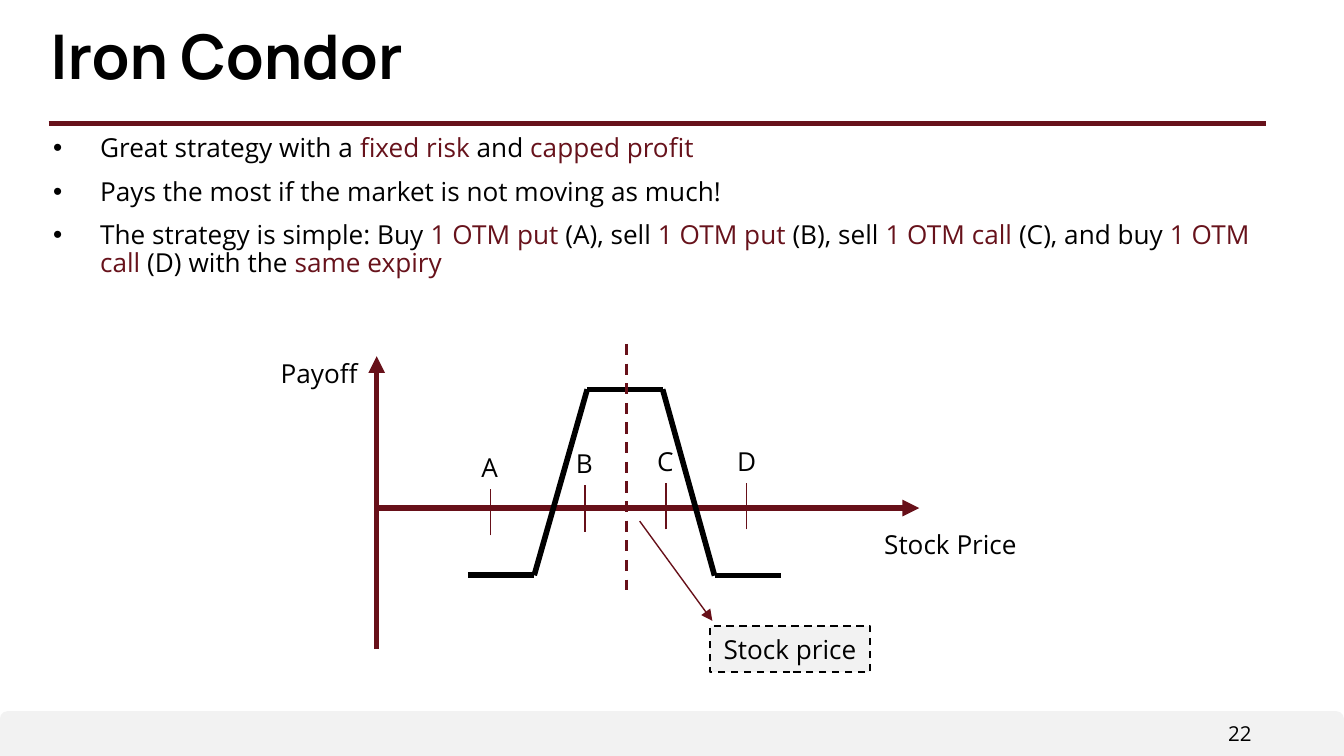
"""Builds the Iron Condor option strategy slide."""
from itertools import pairwise

from lxml import etree
from pptx import Presentation
from pptx.dml.color import RGBColor
from pptx.enum.dml import MSO_LINE
from pptx.enum.shapes import MSO_CONNECTOR, MSO_SHAPE
from pptx.enum.text import MSO_ANCHOR, PP_ALIGN
from pptx.oxml.ns import qn
from pptx.util import Pt

STRAIGHT = MSO_CONNECTOR.STRAIGHT
DASH = MSO_LINE.DASH
RECT, ROUND_TOP = MSO_SHAPE.RECTANGLE, MSO_SHAPE.ROUND_2_SAME_RECTANGLE
TOP, MIDDLE = MSO_ANCHOR.TOP, MSO_ANCHOR.MIDDLE
LEFT, CENTER, RIGHT = PP_ALIGN.LEFT, PP_ALIGN.CENTER, PP_ALIGN.RIGHT


def rgb(value):
    return RGBColor.from_string(value)


def add_text(p, text, size=14, font="Open Sans", color="000000", bold=False,
             align=LEFT, spacing=None):
    p.alignment = align
    p.line_spacing = spacing
    r = p.add_run()
    r.text = text
    r.font.size, r.font.name, r.font.bold = Pt(size), font, bold
    r.font.color.rgb = rgb(color)


class Deck:
    BLACK, GREY = "000000", "F2F2F2"
    ACCENT, AXIS = "67121B", "671019"

    def __init__(self, width, height):
        self.prs = Presentation()
        self.prs.slide_width, self.prs.slide_height = Pt(width), Pt(height)
        self.s = self.prs.slides.add_slide(self.prs.slide_layouts[5])

    def frame(self, sp, inset=(7.2, 3.6), wrap=True, anchor=TOP):
        tf = sp.text_frame
        tf.margin_left = tf.margin_right = Pt(inset[0])
        tf.margin_top = tf.margin_bottom = Pt(inset[1])
        tf.word_wrap, tf.vertical_anchor = wrap, anchor
        return tf

    def title(self, text, x, y, w, h):
        sp = self.s.shapes.title
        sp.left, sp.top, sp.width, sp.height = Pt(x), Pt(y), Pt(w), Pt(h)
        tf = self.frame(sp, (5.4, 2.7))
        add_text(tf.paragraphs[0], text, size=33, font="Manrope", bold=True,
                 spacing=0.9)

    def text(self, text, x, y, w, h, inset=(7.2, 3.6), wrap=True, **fmt):
        sp = self.s.shapes.add_textbox(Pt(x), Pt(y), Pt(w), Pt(h))
        add_text(self.frame(sp, inset, wrap).paragraphs[0], text, **fmt)

    def bullets(self, items, x, y, w, h):
        """Lists items in which text between asterisks takes the accent colour."""
        sp = self.s.shapes.add_textbox(Pt(x), Pt(y), Pt(w), Pt(h))
        tf = self.frame(sp, (5.4, 2.7))
        for i, item in enumerate(items):
            p = tf.add_paragraph() if i else tf.paragraphs[0]
            pPr = p._p.get_or_add_pPr()
            pPr.set("marL", str(Pt(36)))
            pPr.set("indent", str(Pt(-25.2)))
            etree.SubElement(pPr, qn("a:buFont"), typeface="Arial")
            etree.SubElement(pPr, qn("a:buChar"), char="•")
            for j, part in enumerate(item.split("*")):
                if part:
                    color = self.ACCENT if j % 2 else self.BLACK
                    add_text(p, part, color=color, spacing=0.9)
            if i:
                p.space_before = Pt(8)

    def shape(self, kind, x, y, w, h, text=None, border=None):
        sp = self.s.shapes.add_shape(kind, Pt(x), Pt(y), Pt(w), Pt(h))
        sp.shadow.inherit = False
        sp.fill.solid()
        sp.fill.fore_color.rgb = rgb(self.GREY)
        if border:
            sp.line.color.rgb = rgb(border)
            sp.line.width, sp.line.dash_style = Pt(1), DASH
        else:
            sp.line.fill.background()
        if text:
            tf = self.frame(sp, anchor=MIDDLE)
            add_text(tf.paragraphs[0], text, align=CENTER)
        return sp

    def line(self, start, end, color, width, dash=None, arrow=False):
        sp = self.s.shapes.add_connector(
            STRAIGHT, Pt(start[0]), Pt(start[1]), Pt(end[0]), Pt(end[1]))
        sp.line.color.rgb = rgb(color)
        sp.line.width = Pt(width)
        if dash:
            sp.line.dash_style = dash
        if arrow:
            etree.SubElement(sp.line._get_or_add_ln(), qn("a:tailEnd"),
                             type="triangle")
        etree.SubElement(sp._element.spPr, qn("a:effectLst"))


def main():
    deck = Deck(720, 405)
    footer = deck.shape(ROUND_TOP, 0, 381, 720, 24)
    footer.adjustments[0], footer.adjustments[1] = 0.167, 0
    deck.text("22", 584.6, 383.8, 91.4, 18, inset=(5.4, 2.7), size=11,
              align=RIGHT)
    deck.line((26, 66.2), (678.2, 66.2), deck.ACCENT, 2.5)
    deck.title("Iron Condor", 21.6, 11.5, 670.3, 49)
    deck.bullets([
        "Great strategy with a *fixed risk *and *capped profit*",
        "Pays the most if the market is not moving as much!",
        "The strategy is simple: Buy *1 OTM put* (A), sell *1 OTM put *(B), "
        "sell *1 OTM call *(C), and buy *1 OTM call* (D) with the *same expiry*",
    ], 12.2, 69.8, 670.3, 290.2)

    deck.text("Stock Price", 466.6, 279.4, 139.7, 24.5)
    deck.text("Payoff", 143.3, 187.9, 63.4, 24.5)
    deck.line((201.8, 347.8), (201.8, 190.8), deck.AXIS, 3, arrow=True)
    deck.line((202.3, 272.2), (492.5, 272.2), deck.AXIS, 3, arrow=True)

    payoff = [(250.6, 308.2), (286.2, 308.2), (314.6, 208.6),
              (355, 208.6), (382.8, 308.4), (418.3, 308.4)]
    for start, end in pairwise(payoff):
        deck.line(start, end, deck.BLACK, 3)

    strikes = [("A", 262.8, 262), ("B", 313.4, 260),
               ("C", 356.9, 258.8), ("D", 399.8, 258.8)]
    for name, x, y in strikes:
        deck.text(name, x - 12, y - 23.6, 24, 24.5, wrap=False)
        deck.line((x, y + 24.8), (x, y), deck.AXIS, 0.75)

    deck.line((335.7, 184.3), (335.7, 316.1), deck.AXIS, 1.5, dash=DASH)
    deck.line((342.7, 279.2), (381.6, 332.6), deck.AXIS, 0.75, arrow=True)
    deck.shape(RECT, 380.3, 335.5, 86, 24.5, "Stock price", deck.BLACK)
    deck.prs.save("out.pptx")


if __name__ == "__main__":
    main()
